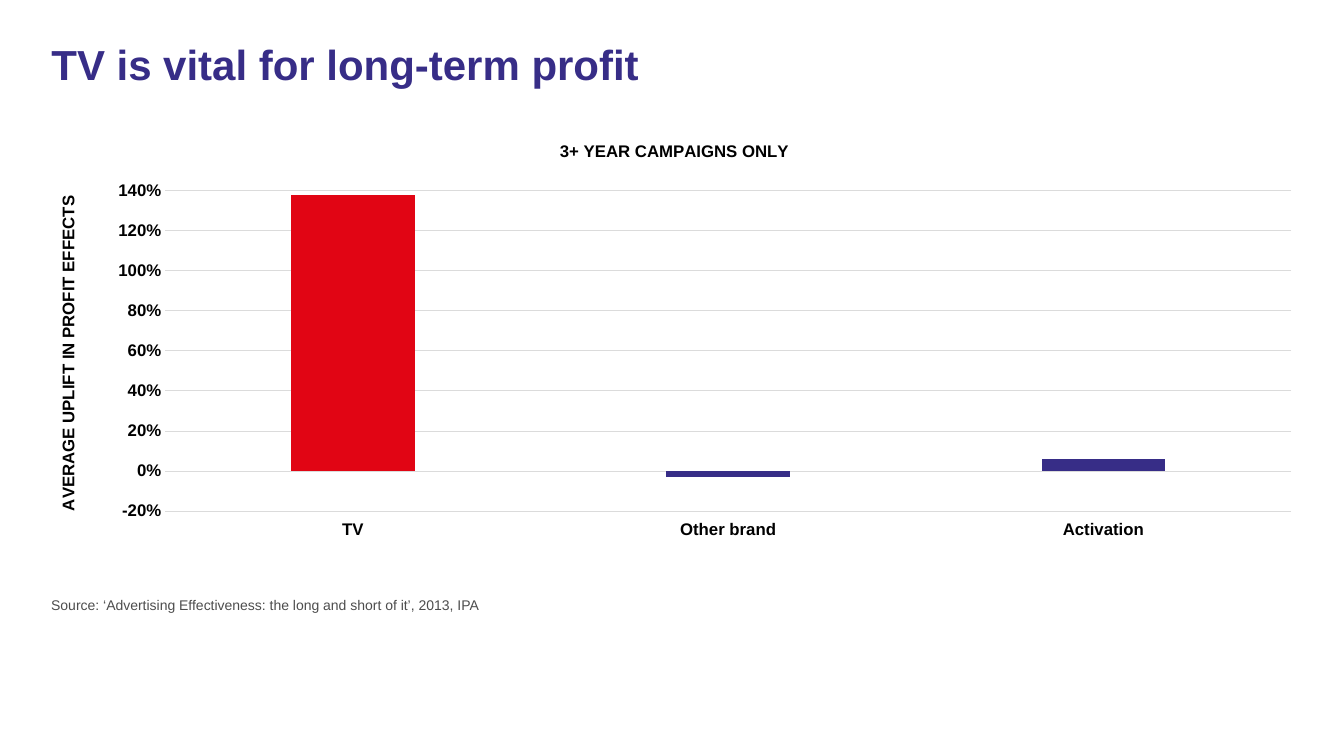
from dataclasses import dataclass

from lxml import etree
from pptx import Presentation
from pptx.chart.data import CategoryChartData
from pptx.dml.color import RGBColor
from pptx.enum.chart import XL_CHART_TYPE, XL_TICK_LABEL_POSITION, XL_TICK_MARK
from pptx.enum.text import MSO_ANCHOR, PP_ALIGN
from pptx.oxml.ns import qn
from pptx.util import Inches, Pt

COLUMNS = XL_CHART_TYPE.COLUMN_CLUSTERED
LABELS_LOW = XL_TICK_LABEL_POSITION.LOW
NO_TICKS = XL_TICK_MARK.NONE
TOP = MSO_ANCHOR.TOP
LEFT = PP_ALIGN.LEFT


@dataclass(frozen=True)
class Theme:
    font: str = "Arial"
    brand: RGBColor = RGBColor(0x37, 0x2D, 0x87)
    accent: RGBColor = RGBColor(0xE1, 0x05, 0x14)
    text: RGBColor = RGBColor(0, 0, 0)
    muted: RGBColor = RGBColor(0x4D, 0x4D, 0x4D)
    grid: RGBColor = RGBColor(0xDB, 0xDB, 0xDB)
    title_size: int = 30
    chart_size: int = 12
    source_size: int = 10


THEME = Theme()


def set_font(font, size, color, bold=False):
    for name, value in {"name": THEME.font, "size": Pt(size), "bold": bold}.items():
        setattr(font, name, value)
    font.color.rgb = color


def write_text(tf, text, size, color, bold=False):
    for name, value in {"word_wrap": True, "vertical_anchor": TOP}.items():
        setattr(tf, name, value)
    p = tf.paragraphs[0]
    p.alignment = LEFT
    r = p.add_run()
    r.text = text
    set_font(r.font, size, color, bold)
    return p


def set_layout(element, index, values):
    """Place a chart part by fractions of the chart; index is the layout's child position."""
    for old in element.findall(qn("c:layout")):
        element.remove(old)
    layout = etree.Element(qn("c:layout"))
    manual = etree.SubElement(layout, qn("c:manualLayout"))
    for tag, value in values.items():
        etree.SubElement(manual, qn(f"c:{tag}")).set("val", str(value))
    element.insert(index, layout)


def write_chart_title(title, text, x, y):
    p = title.text_frame.paragraphs[0]
    r = p.add_run()
    r.text = text
    set_font(r.font, THEME.chart_size, THEME.text, True)
    set_layout(title._element, 1, {"xMode": "edge", "yMode": "edge", "x": x, "y": y})


def add_title(slide, box, text):
    sp = slide.shapes.title
    sp.left, sp.top, sp.width, sp.height = box
    p = write_text(sp.text_frame, text, THEME.title_size, THEME.brand, True)
    p.line_spacing = 0.9


def add_source(slide, box, text):
    sp = slide.shapes.add_textbox(*box)
    write_text(sp.text_frame, text, THEME.source_size, THEME.muted)


def style_axes(chart):
    for axis in (chart.category_axis, chart.value_axis):
        axis.major_tick_mark = axis.minor_tick_mark = NO_TICKS
        axis.format.line.fill.background()
        set_font(axis.tick_labels.font, THEME.chart_size, THEME.text, True)
    chart.category_axis.tick_label_position = LABELS_LOW

    axis = chart.value_axis
    scale = {"minimum_scale": -0.2, "maximum_scale": 1.4, "major_unit": 0.2}
    for name, value in scale.items():
        setattr(axis, name, value)
    axis.tick_labels.number_format = "0%"
    axis.tick_labels.number_format_is_linked = False
    line = axis.major_gridlines.format.line
    line.color.rgb = THEME.grid
    line.width = Pt(0.75)


def add_uplift_chart(slide, box):
    data = CategoryChartData(number_format="0%")
    data.categories = ["TV", "Other brand", "Activation"]
    data.add_series("Series 1", [1.38, -0.03, 0.06])
    chart = slide.shapes.add_chart(COLUMNS, *box, data).chart
    chart.has_legend = False
    set_font(chart.font, THEME.chart_size, THEME.text)
    style_axes(chart)
    write_chart_title(chart.chart_title, "3+ YEAR CAMPAIGNS ONLY", 0.43, 0.01)
    write_chart_title(chart.value_axis.axis_title,
                      "AVERAGE UPLIFT IN PROFIT EFFECTS", 0.04, 0.14)

    plot = chart.plots[0]
    plot.gap_width = 204
    plot.vary_by_categories = False
    series = plot.series[0]
    series.invert_if_negative = False
    for part, color in ((series, THEME.brand), (series.points[0], THEME.accent)):
        part.format.fill.solid()
        part.format.fill.fore_color.rgb = color

    plot_area = chart._chartSpace.find(f".//{qn('c:plotArea')}")
    set_layout(plot_area, 0, {
        "layoutTarget": "inner", "xMode": "edge", "yMode": "edge",
        "x": 0.126, "y": 0.136, "w": 0.874, "h": 0.753,
    })


def main():
    prs = Presentation()
    prs.slide_width, prs.slide_height = Inches(13.33), Inches(7.5)
    slide = prs.slides.add_slide(prs.slide_layouts[5])
    left, width = Inches(0.41), Inches(12.4)
    add_title(slide, (left, Inches(0.39), width, Inches(1.12)),
              "TV is vital for long-term profit")
    add_uplift_chart(slide, (Inches(0.03), Inches(1.32), Inches(12.78), Inches(4.22)))
    add_source(slide, (left, Inches(5.87), width, Inches(0.33)),
               "Source: ‘Advertising Effectiveness: the long and short of it’, 2013, IPA")
    prs.save("out.pptx")


if __name__ == "__main__":
    main()
